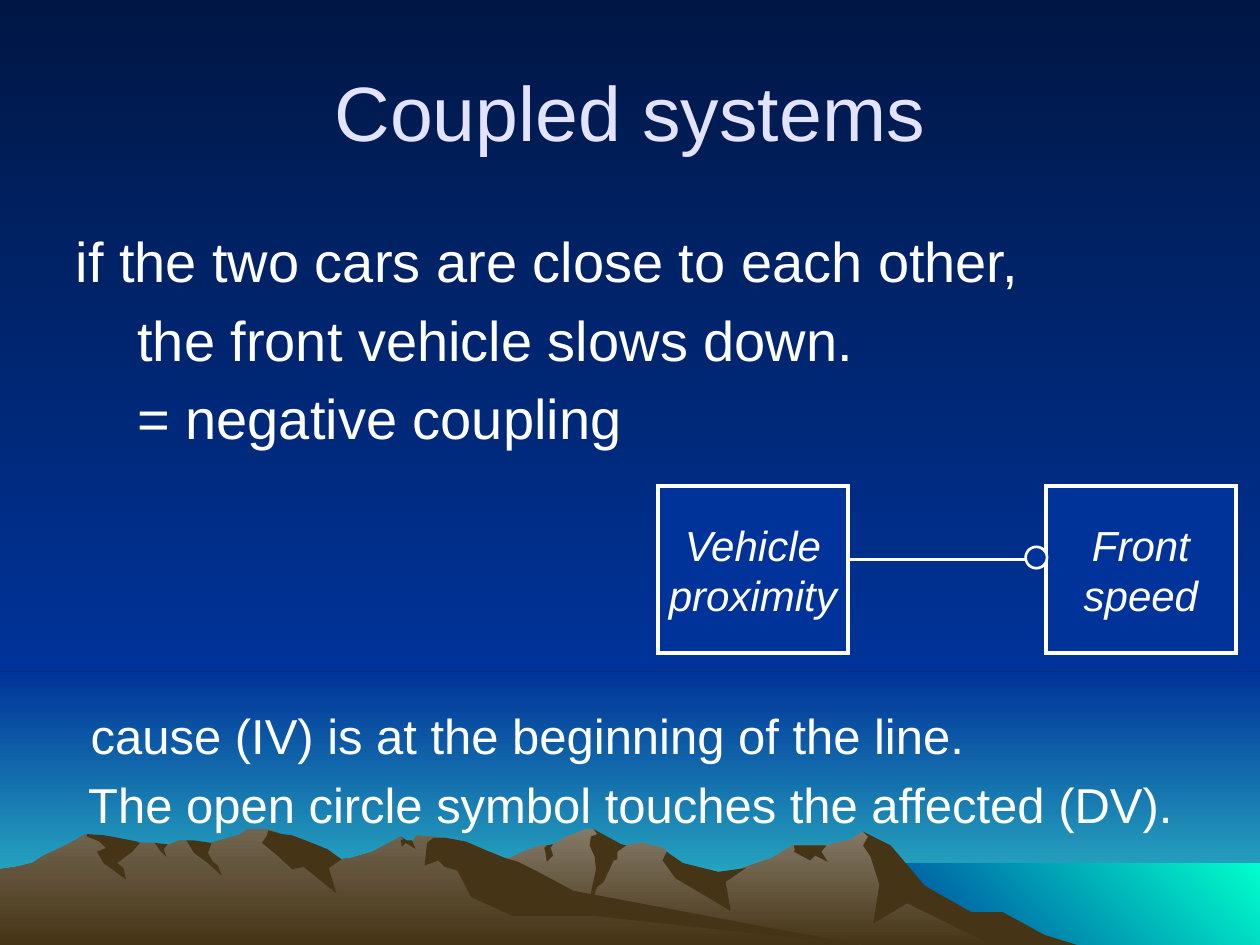
from lxml import etree
from pptx import Presentation
from pptx.dml.color import RGBColor
from pptx.enum.shapes import MSO_CONNECTOR, MSO_SHAPE
from pptx.enum.text import MSO_ANCHOR, MSO_AUTO_SIZE, PP_ALIGN
from pptx.oxml.ns import qn
from pptx.util import Pt

RECTANGLE, OVAL = MSO_SHAPE.RECTANGLE, MSO_SHAPE.OVAL
STRAIGHT = MSO_CONNECTOR.STRAIGHT
CENTER = PP_ALIGN.CENTER
MIDDLE, TOP = MSO_ANCHOR.MIDDLE, MSO_ANCHOR.TOP
NO_FIT = MSO_AUTO_SIZE.NONE

PX = 9144
NIGHT, BLUE, TURQUOISE, AQUA = "001745", "003399", "33CCCC", "00FFCC"
ROCK, PALE_ROCK, EARTH = "72654F", "857A68", "463416"
WHITE, LAVENDER = "FFFFFF", "E3E3FF"
DOWN, UP_RIGHT = 270, 45

RIGHT_RANGE = [
    (802, 740), (778, 727), (764, 723), (723, 698), (702, 671), (685, 660), (676, 666),
    (656, 671), (629, 671), (613, 681), (566, 697), (536, 690), (529, 676), (526, 673),
    (509, 669), (497, 671), (486, 673), (474, 661), (471, 658), (465, 658), (450, 664),
    (438, 671), (430, 671), (418, 675), (405, 681), (394, 685), (355, 698), (327, 709),
    (277, 739), (258, 751), (821, 751)]
LEFT_RANGE = [
    (690, 751), (667, 748), (432, 712), (354, 665), (331, 663), (327, 668), (323, 668),
    (318, 664), (296, 676), (279, 681), (271, 682), (260, 676), (236, 681), (223, 663),
    (219, 660), (212, 658), (196, 658), (191, 662), (178, 666), (168, 669), (160, 671),
    (148, 667), (143, 667), (132, 671), (128, 671), (123, 669), (111, 669), (94, 671),
    (68, 662), (56, 669), (46, 674), (35, 679), (26, 685), (14, 688), (0, 690), (0, 751)]
RIGHT_SHADES = [
    [(796, 724), (771, 724), (734, 703), (707, 671), (685, 660), (689, 664), (685, 671),
     (691, 680), (698, 702), (693, 733), (720, 717), (792, 752), (858, 751), (829, 742)],
    [(471, 658), (474, 662), (469, 664), (468, 671), (472, 680), (473, 690), (465, 727),
     (474, 704), (479, 700), (487, 683), (490, 682), (490, 676), (497, 671), (493, 670)],
    [(529, 676), (526, 683), (536, 697), (580, 723), (576, 700), (592, 689), (570, 692),
     (542, 685)],
    [(650, 671), (630, 671), (631, 675), (630, 676), (643, 683), (647, 679), (657, 684),
     (652, 676), (656, 671)],
    [(433, 677), (432, 673), (434, 671), (439, 670), (437, 673), (439, 679), (434, 684)]]
LEFT_SHADES = [
    [(212, 663), (208, 669), (219, 678), (232, 690), (241, 688), (267, 709), (261, 689),
     (271, 682), (260, 674), (245, 668), (232, 663), (224, 662), (213, 659)],
    [(370, 668), (354, 665), (344, 665), (339, 669), (337, 687), (348, 683), (353, 688),
     (363, 691), (374, 712), (407, 727), (472, 727), (690, 751), (683, 750), (455, 707),
     (427, 692), (411, 684), (401, 681), (386, 675)],
    [(318, 667), (320, 666), (318, 664), (323, 667), (327, 667), (330, 674), (322, 669),
     (319, 672)],
    [(154, 667), (168, 669), (165, 677), (169, 684), (173, 687), (176, 695), (165, 685),
     (154, 677), (148, 667)],
    [(133, 670), (130, 674), (132, 680), (127, 675), (123, 669)],
    [(109, 668), (111, 669), (105, 676), (93, 685), (98, 689), (100, 698), (82, 685),
     (77, 676), (84, 673), (79, 668), (69, 664), (69, 662), (83, 663), (94, 665)]]

BODY_LINES = [
    ("if the two cars are close to each other,", 32, 0, 0),
    ("the front vehicle slows down.", 32, 49, 6.3),
    ("= negative coupling", 32, 49, 6.3),
    ("cause (IV) is at the beginning of the line.", 28, 12, 145.6),
    ("The open circle symbol touches the affected (DV).", 28, 10, 6.2)]


def color(value):
    return RGBColor.from_string(value)


class Painter:
    font = "Arial"

    def __init__(self, slide):
        self.slide = slide
        self.shapes = slide.shapes

    def fill(self, fill, colors, angle=DOWN):
        if len(colors) == 1:
            fill.solid()
            fill.fore_color.rgb = color(colors[0])
            return
        fill.gradient()
        fill.gradient_angle = angle
        for stop, value in zip(fill.gradient_stops, colors):
            stop.color.rgb = color(value)

    def outline(self, shape, width):
        shape.line.color.rgb = color(WHITE)
        shape.line.width = Pt(width)
        etree.SubElement(shape.get_or_add_ln(), qn("a:miter"), lim="800000")

    def style(self, para, size, value, italic=False):
        for span in para.runs:
            span.font.name = self.font
            span.font.size = Pt(size)
            span.font.italic = italic
            span.font.color.rgb = color(value)

    def place(self, shape, left, top, width, height):
        shape.left, shape.top = left * PX, top * PX
        shape.width, shape.height = width * PX, height * PX

    def shape(self, kind, left, top, width, height, colors, line=0, angle=DOWN):
        shape = self.shapes.add_shape(kind, left * PX, top * PX, width * PX, height * PX)
        shape.shadow.inherit = False
        self.fill(shape.fill, colors, angle)
        if line:
            self.outline(shape, line)
        else:
            shape.line.fill.background()
        return shape

    def outcrop(self, points, *colors):
        builder = self.shapes.build_freeform(*points[0], scale=PX)
        builder.add_line_segments(points[1:], close=True)
        shape = builder.convert_to_shape()
        shape.shadow.inherit = False
        self.fill(shape.fill, colors)
        shape.line.fill.background()

    def box(self, text, left):
        box = self.shape(RECTANGLE, left, 386, 151, 132, [BLUE], 2.25)
        frame = box.text_frame
        frame.text = text
        frame.word_wrap = False
        frame.vertical_anchor = MIDDLE
        for para in frame.paragraphs:
            para.alignment = CENTER
            self.style(para, 24, WHITE, italic=True)

    def line(self, left, top, right, bottom):
        line = self.shapes.add_connector(STRAIGHT, left * PX, top * PX, right * PX, bottom * PX)
        self.outline(line, 1.5)
        etree.SubElement(line._element.spPr, qn("a:effectLst"))

    def placeholder(self, holder, left, top, width, height, anchor):
        self.place(holder, left, top, width, height)
        self.shapes._spTree.append(holder._element)
        frame = holder.text_frame
        frame.auto_size = NO_FIT
        frame.word_wrap = True
        frame.vertical_anchor = anchor
        return frame

    def title(self, text):
        frame = self.placeholder(self.shapes.title, 50, 25, 900, 125, MIDDLE)
        frame.text = text
        frame.paragraphs[0].alignment = CENTER
        self.style(frame.paragraphs[0], 44, LAVENDER)

    def body(self, lines):
        frame = self.placeholder(self.slide.placeholders[1], 50, 175, 900, 492, TOP)
        frame.text = "\n".join(text for text, *_ in lines)
        for para, (_, size, indent, gap) in zip(frame.paragraphs, lines):
            para.space_before = Pt(gap)
            self.style(para, size, WHITE)
            properties = para._p.get_or_add_pPr()
            properties.set("marL", str(indent * PX))
            properties.set("indent", "0")
            etree.SubElement(properties, qn("a:buNone"))


def main():
    deck = Presentation()
    deck.slide_width, deck.slide_height = 1000 * PX, 750 * PX
    page = Painter(deck.slides.add_slide(deck.slide_layouts[1]))

    page.fill(page.slide.background.fill, [NIGHT, BLUE])
    page.shape(RECTANGLE, 0, 533, 1000, 217, [BLUE, TURQUOISE])
    page.shape(RECTANGLE, 0, 0, 1000, 533, [NIGHT, BLUE])
    page.shape(RECTANGLE, 683, 685, 317, 65, [BLUE, AQUA], angle=UP_RIGHT)
    for ridge, rock, shades in ((RIGHT_RANGE, PALE_ROCK, RIGHT_SHADES),
                                (LEFT_RANGE, ROCK, LEFT_SHADES)):
        page.outcrop(ridge, rock, EARTH)
        for shade in shades:
            page.outcrop(shade, EARTH)

    page.title("Coupled systems")
    page.body(BODY_LINES)
    page.box("Vehicle\nproximity", 522)
    page.line(672, 444, 814, 444)
    page.box("Front\nspeed", 830)
    page.shape(OVAL, 814, 434, 17, 17, [BLUE], 1.5)
    deck.save("out.pptx")


if __name__ == "__main__":
    main()
